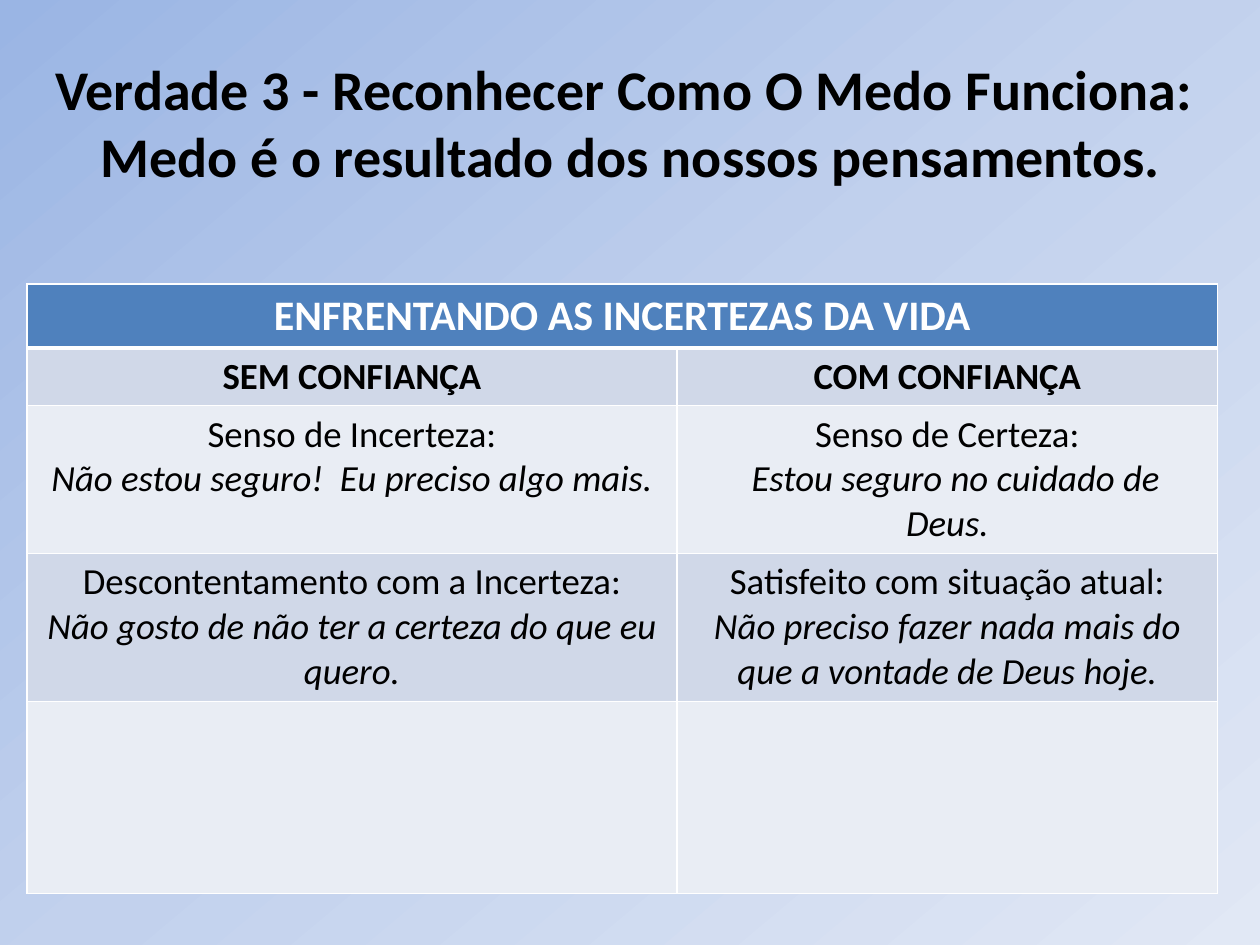
from copy import deepcopy

from lxml import etree
from pptx import Presentation
from pptx.dml.color import RGBColor
from pptx.enum.text import MSO_ANCHOR, PP_ALIGN
from pptx.oxml.ns import qn
from pptx.util import Pt

CENTER = PP_ALIGN.CENTER
TOP = MSO_ANCHOR.TOP
FONT = "Calibri"
BLACK, WHITE = "000000", "FFFFFF"
HEADER_FILL = "4F81BD"
BANDS = ("E9EDF4", "D0D8E8")
BACKGROUND = ((0, "9AB5E4"), (0.5, "C2D1ED"), (1, "E1E8F5"))

TITLE = ("Verdade 3 - Reconhecer Como O Medo Funciona:  "
         "Medo é o resultado dos nossos pensamentos.")
HEADER = "ENFRENTANDO AS INCERTEZAS DA VIDA"
SUBHEADERS = ("SEM CONFIANÇA", "COM CONFIANÇA")
# Each cell holds a plain statement and the thought in italics below it.
STATEMENTS = (
    (("Senso de Incerteza:", "", "Não estou seguro!  Eu preciso algo mais."),
     ("Senso de Certeza:", "  ", "Estou seguro no cuidado de Deus.")),
    (("Descontentamento com a Incerteza:", "",
      "Não gosto de não ter a certeza do que eu quero."),
     ("Satisfeito com situação atual:", "",
      "Não preciso fazer nada mais do que a vontade de Deus hoje.")),
)
COL_WIDTHS = (371.5, 308.9)
ROW_HEIGHTS = (36.6, 32.6, 84.5, 84.5, 109.7)


def rgb(color):
    return RGBColor.from_string(color)


def style_paragraph(p, size, color, bold=False):
    p.alignment = CENTER
    p.font.name = FONT
    p.font.size = Pt(size)
    p.font.bold = bold
    p.font.color.rgb = rgb(color)


def set_background(s):
    fill = s.background.fill
    fill.gradient()
    fill.gradient_angle = 310
    stops = s.element.find(".//" + qn("a:gsLst"))
    stops.append(deepcopy(stops[0]))
    for stop, (position, color) in zip(fill.gradient_stops, BACKGROUND):
        stop.position = position
        stop.color.rgb = rgb(color)


def add_title(s):
    tf = s.shapes.add_textbox(Pt(20.2), Pt(27.4), Pt(680.4), Pt(67)).text_frame
    tf.word_wrap = True
    tf.vertical_anchor = TOP
    p = tf.paragraphs[0]
    p.text = TITLE
    style_paragraph(p, 32, BLACK, bold=True)


def set_borders(cell, widths):
    """Draw white cell borders; widths maps L, R, T and B to points."""
    tc_pr = cell._tc.get_or_add_tcPr()
    for i, side in enumerate("LRTB"):
        ln = etree.Element(qn(f"a:ln{side}"), w=str(Pt(widths[side])))
        fill = etree.SubElement(ln, qn("a:solidFill"))
        etree.SubElement(fill, qn("a:srgbClr"), val=WHITE)
        tc_pr.insert(i, ln)


def fill_statement(p, statement, indent, thought):
    p.add_run().text = statement
    p.add_line_break()
    if indent:
        p.add_run().text = indent
    r = p.add_run()
    r.text = thought
    r.font.italic = True
    style_paragraph(p, 21, BLACK)


def add_comparison_table(s):
    table = s.shapes.add_table(
        len(ROW_HEIGHTS), len(COL_WIDTHS), Pt(15.4), Pt(162.3),
        Pt(sum(COL_WIDTHS)), Pt(sum(ROW_HEIGHTS))).table
    for column, width in zip(table.columns, COL_WIDTHS):
        column.width = Pt(width)
    for i, (row, height) in enumerate(zip(table.rows, ROW_HEIGHTS)):
        row.height = Pt(height)
        for cell in row.cells:
            set_borders(cell, {"L": 1, "R": 1, "T": 3 if i == 1 else 1,
                               "B": 3 if i == 0 else 1})
            cell.fill.solid()
            cell.fill.fore_color.rgb = rgb(BANDS[i % 2] if i else HEADER_FILL)

    header = table.cell(0, 0)
    header.merge(table.cell(0, 1))
    p = header.text_frame.paragraphs[0]
    p.text = HEADER
    style_paragraph(p, 24, WHITE, bold=True)
    for col, text in enumerate(SUBHEADERS):
        p = table.cell(1, col).text_frame.paragraphs[0]
        p.text = text
        style_paragraph(p, 21, BLACK, bold=True)
    for i, statements in enumerate(STATEMENTS, start=2):
        for col, parts in enumerate(statements):
            fill_statement(table.cell(i, col).text_frame.paragraphs[0], *parts)


def main():
    prs = Presentation()
    prs.slide_width, prs.slide_height = Pt(720), Pt(540)
    s = prs.slides.add_slide(prs.slide_layouts[6])
    set_background(s)
    add_comparison_table(s)
    add_title(s)
    prs.save("out.pptx")


if __name__ == "__main__":
    main()
